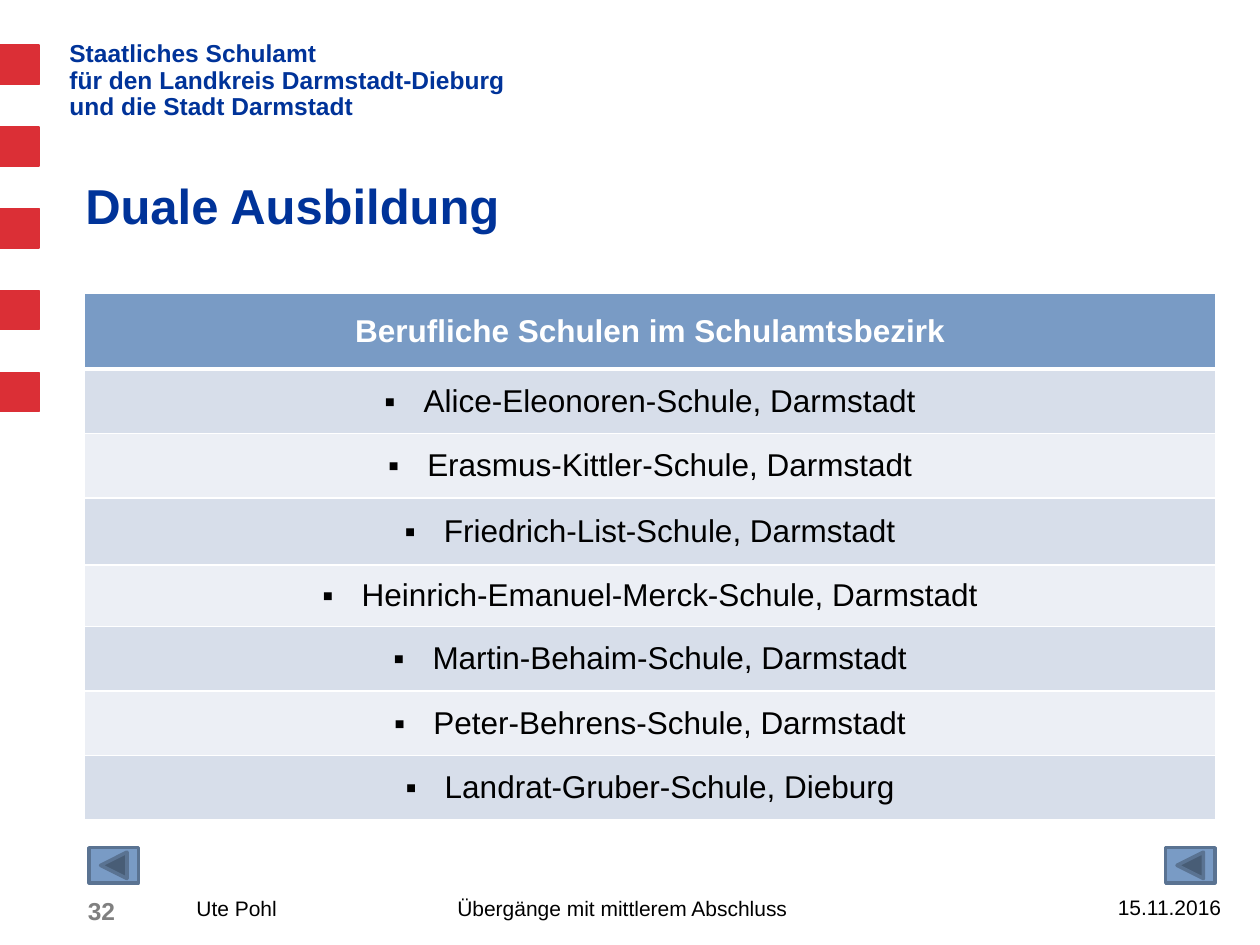
"""Build the slide on vocational schools for dual training."""
import pptx
import pptx.dml.color
import pptx.enum.shapes
import pptx.enum.text
import pptx.oxml
import pptx.oxml.ns
import pptx.util
from dataclasses import dataclass

Cm = pptx.util.Cm
Pt = pptx.util.Pt
ALIGN = pptx.enum.text.PP_ALIGN
ANCHOR = pptx.enum.text.MSO_ANCHOR
SHAPE = pptx.enum.shapes.MSO_SHAPE

OFFICE = """Staatliches Schulamt
für den Landkreis Darmstadt-Dieburg
und die Stadt Darmstadt"""
TITLE = "Duale Ausbildung"
TABLE_HEAD = "Berufliche Schulen im Schulamtsbezirk"
SCHOOLS = [
    ("Alice-Eleonoren-Schule, Darmstadt", 1.3, 0),
    ("Erasmus-Kittler-Schule, Darmstadt", 1.3, 0),
    ("Friedrich-List-Schule, Darmstadt", 1.35, 0),
    ("Heinrich-Emanuel-Merck-Schule, Darmstadt", 1.24, 0),
    ("Martin-Behaim-Schule, Darmstadt", 1.3, 0),
    ("Peter-Behrens-Schule, Darmstadt", 1.3, 2),
    ("Landrat-Gruber-Schule, Dieburg", 1.3, 2),
]
FOOTER = "Ute Pohl\tÜbergänge mit mittlerem Abschluss"
DATE = "15.11.2016"
PAGE_NUMBER = "32"


@dataclass(frozen=True)
class Theme:
    """Colours and type sizes of the slide."""
    font: str = "Arial"
    navy: str = "003399"
    red: str = "DB2F36"
    blue: str = "799BC5"
    outline: str = "5A7392"
    bands: tuple = ("D7DEEA", "ECEFF5")
    white: str = "FFFFFF"
    black: str = "000000"
    grey: str = "808080"
    title: int = 28
    body: int = 18
    label: int = 14
    small: int = 12


THEME = Theme()


def rgb(value):
    """Return a colour from its hex value."""
    return pptx.dml.color.RGBColor.from_string(value)


def style(para, size, color, bold=False):
    """Format every run of a paragraph."""
    for span in para.runs:
        span.font.name = THEME.font
        span.font.size = Pt(size)
        span.font.bold = bold
        span.font.color.rgb = rgb(color)


def add_properties(para, *elements):
    """Append XML elements to the properties of a paragraph."""
    properties = para._p.get_or_add_pPr()
    for element in elements:
        properties.append(parse_drawing(element))
    return properties


def parse_drawing(element):
    """Parse a DrawingML fragment."""
    head, rest = element.split(" ", 1)
    return pptx.oxml.parse_xml(f"{head} {pptx.oxml.ns.nsdecls('a')} {rest}")


def add_text(page, place, text, size, color, bold=False, align=ALIGN.LEFT,
             anchor=ANCHOR.TOP, margins=(0.25, 0.13), spacing=None, tab=None):
    """Add a text box with one style throughout."""
    box = page.shapes.add_textbox(*map(Cm, place))
    frame = box.text_frame
    frame.word_wrap = True
    frame.vertical_anchor = anchor
    frame.margin_left = frame.margin_right = Cm(margins[0])
    frame.margin_top = frame.margin_bottom = Cm(margins[1])
    frame.text = text
    for para in frame.paragraphs:
        para.alignment = align
        if spacing:
            para.line_spacing = spacing
        if tab:
            add_properties(para, f'<a:tabLst ><a:tab pos="{Cm(tab)}" algn="l"/></a:tabLst>')
        style(para, size, color, bold)


def add_figure(page, kind, place, fill, line, width):
    """Add a filled and outlined preset shape."""
    shape = page.shapes.add_shape(kind, *map(Cm, place))
    shape.shadow.inherit = False
    shape.fill.solid()
    shape.fill.fore_color.rgb = rgb(fill)
    shape.line.color.rgb = rgb(line)
    shape.line.width = Pt(width)


def fill_cell(cell, text, fill, color, bold=False, bottom=1):
    """Write a table cell with white borders and a plain fill."""
    properties = cell._tc.get_or_add_tcPr()
    for side, width in (("L", 1), ("R", 1), ("T", 1), ("B", bottom)):
        properties.append(parse_drawing(
            f'<a:ln{side} w="{Pt(width)}"><a:solidFill><a:srgbClr val="{THEME.white}"/>'
            f'</a:solidFill></a:ln{side}>'))
    cell.fill.solid()
    cell.fill.fore_color.rgb = rgb(fill)
    cell.vertical_anchor = ANCHOR.MIDDLE
    cell.text_frame.text = text
    para = cell.text_frame.paragraphs[0]
    para.alignment = ALIGN.CENTER
    style(para, THEME.body, color, bold)
    return para


def add_school_table(page):
    """Add the table with one bulleted school per row."""
    heights = [1.52] + [height for _, height, _ in SCHOOLS]
    frame = page.shapes.add_table(len(heights), 1, Cm(1.7), Cm(5.92), Cm(22.81), Cm(sum(heights)))
    table = frame.table
    table.horz_banding = False
    for row, height in zip(table.rows, heights):
        row.height = Cm(height)
    fill_cell(table.cell(0, 0), TABLE_HEAD, THEME.blue, THEME.white, True, 3)
    for index, (school, _, space) in enumerate(SCHOOLS):
        para = fill_cell(table.cell(index + 1, 0), school, THEME.bands[index % 2], THEME.black)
        if space:
            para.space_before = para.space_after = Pt(space)
        properties = add_properties(para, '<a:buFont typeface="Arial"/>', '<a:buChar char="▪"/>')
        properties.set("marL", str(Cm(0.79)))
        properties.set("indent", str(-Cm(0.79)))


def main():
    """Build and save the deck."""
    deck = pptx.Presentation()
    deck.slide_width, deck.slide_height = Cm(25.4), Cm(19.05)
    page = deck.slides.add_slide(deck.slide_layouts[6])
    for index in range(5):
        add_figure(page, SHAPE.RECTANGLE, (0, 0.91 + 1.65 * index, 0.79, 0.79),
                   THEME.red, THEME.red, 0.75)
    add_text(page, (1.4, 0.71, 20.4, 1.88), OFFICE, THEME.label, THEME.navy, True,
             margins=(0, 0.13), spacing=0.9)
    add_text(page, (1.47, 2.49, 23.42, 2.24), TITLE, THEME.title, THEME.navy, True,
             anchor=ANCHOR.BOTTOM, margins=(0.25, 0))
    add_school_table(page)
    add_text(page, (20.5, 17.91, 4.37, 0.81), DATE, THEME.small, THEME.black, align=ALIGN.RIGHT)
    add_text(page, (3.71, 17.93, 16.61, 0.81), FOOTER, THEME.small, THEME.black, tab=5.26)
    add_text(page, (1.52, 17.93, 1.96, 0.84), PAGE_NUMBER, THEME.label, THEME.grey, True)
    for left in (23.5, 1.8):
        add_figure(page, SHAPE.ACTION_BUTTON_BACK_OR_PREVIOUS, (left, 17.09, 0.99, 0.71),
                   THEME.blue, THEME.outline, 2)
    deck.save("out.pptx")


if __name__ == "__main__":
    main()
